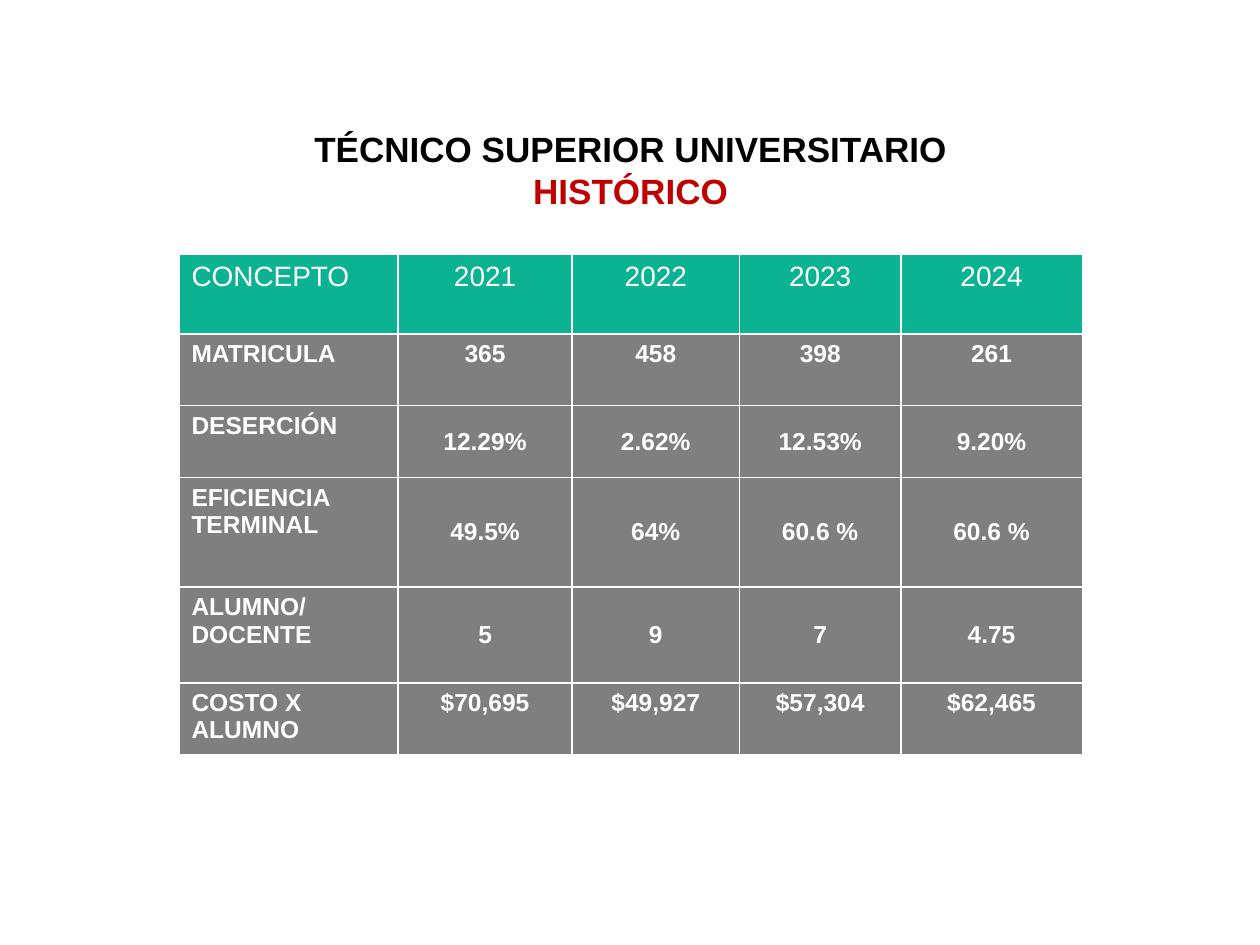
from lxml import etree
from pptx import Presentation
from pptx.dml.color import RGBColor
from pptx.enum.text import MSO_ANCHOR, MSO_AUTO_SIZE, PP_ALIGN
from pptx.oxml.ns import qn
from pptx.util import Inches, Pt

CENTER, LEFT = PP_ALIGN.CENTER, PP_ALIGN.LEFT
TOP, MIDDLE = MSO_ANCHOR.TOP, MSO_ANCHOR.MIDDLE
FIT_SHAPE = MSO_AUTO_SIZE.SHAPE_TO_FIT_TEXT

FONT = "Arial"
BLACK = RGBColor(0x00, 0x00, 0x00)
WHITE = RGBColor(0xFF, 0xFF, 0xFF)
RED = RGBColor(0xC0, 0x00, 0x00)
GREEN = RGBColor(0x0C, 0xB3, 0x93)
GRAY = RGBColor(0x7F, 0x7F, 0x7F)

COL_WIDTHS = [1.74, 1.38, 1.33, 1.28, 1.44]
ROW_HEIGHTS = [0.63, 0.57, 0.57, 0.87, 0.76, 0.57]
ROWS = [
    ["CONCEPTO", "2021", "2022", "2023", "2024"],
    ["MATRICULA", "365", "458", "398", "261"],
    ["DESERCIÓN", "12.29%", "2.62%", "12.53%", "9.20%"],
    ["EFICIENCIA TERMINAL", "49.5%", "64%", "60.6 %", "60.6 %"],
    ["ALUMNO/\nDOCENTE", "5", "9", "7", "4.75"],
    ["COSTO X ALUMNO", "$70,695", "$49,927", "$57,304", "$62,465"],
]
MIDDLE_ROWS = (2, 3, 4)


def format_paragraph(p, size, color, bold, align):
    p.alignment = align
    for r in p.runs:
        r.font.name = FONT
        r.font.size = Pt(size)
        r.font.bold = bold
        r.font.color.rgb = color


def add_title(s):
    box = s.shapes.add_textbox(Inches(2.37), Inches(0.96), Inches(5.27), Inches(0.77))
    tf = box.text_frame
    tf.word_wrap = False
    tf.auto_size = FIT_SHAPE
    tf.text = "TÉCNICO SUPERIOR UNIVERSITARIO\nHISTÓRICO"
    for p, color in zip(tf.paragraphs, (BLACK, RED)):
        format_paragraph(p, 20, color, True, CENTER)


def set_borders(cell, color, width):
    tc_pr = cell._tc.get_or_add_tcPr()
    for side in ("a:lnL", "a:lnR", "a:lnT", "a:lnB"):
        ln = etree.SubElement(tc_pr, qn(side), w=str(Pt(width)))
        fill = etree.SubElement(ln, qn("a:solidFill"))
        etree.SubElement(fill, qn("a:srgbClr"), val=str(color))


def fill_cell(cell, text, row, col):
    header = row == 0
    set_borders(cell, WHITE, 1)
    cell.fill.solid()
    cell.fill.fore_color.rgb = GREEN if header else GRAY
    cell.vertical_anchor = MIDDLE if col and row in MIDDLE_ROWS else TOP
    cell.text_frame.text = text
    for p in cell.text_frame.paragraphs:
        format_paragraph(p, 16 if header else 14, WHITE, not header, CENTER if col else LEFT)


def add_history_table(s):
    frame = s.shapes.add_table(
        len(ROWS), len(COL_WIDTHS), Inches(1.42), Inches(2.02),
        Inches(sum(COL_WIDTHS)), Inches(sum(ROW_HEIGHTS)))
    table = frame.table
    for column, width in zip(table.columns, COL_WIDTHS):
        column.width = Inches(width)
    for row, height in zip(table.rows, ROW_HEIGHTS):
        row.height = Inches(height)
    for i, values in enumerate(ROWS):
        for j, text in enumerate(values):
            fill_cell(table.cell(i, j), text, i, j)


def main():
    prs = Presentation()
    prs.slide_width, prs.slide_height = Inches(10), Inches(7.5)
    s = prs.slides.add_slide(prs.slide_layouts[6])
    add_history_table(s)
    add_title(s)
    prs.save("out.pptx")


if __name__ == "__main__":
    main()
